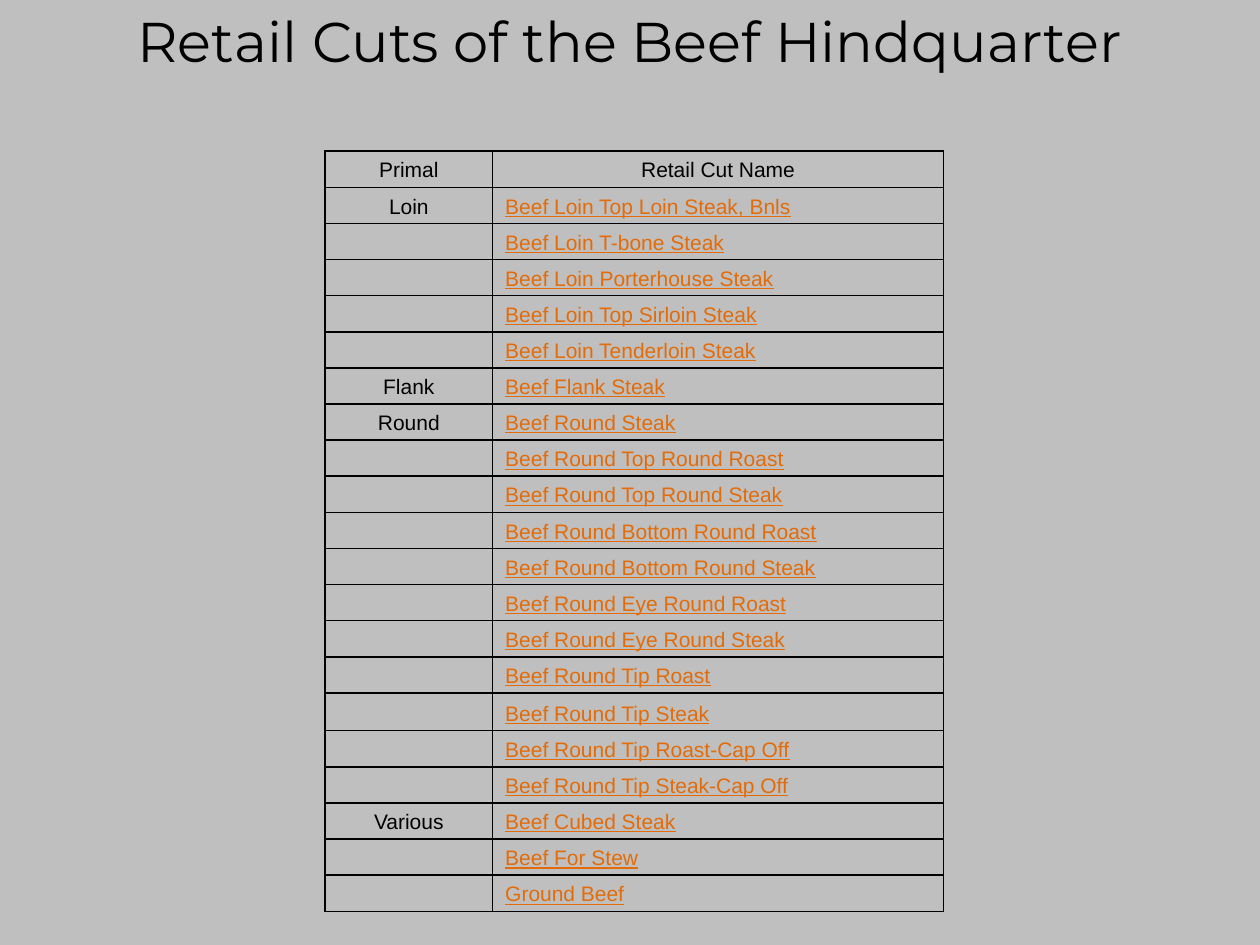
from lxml.etree import SubElement
from pptx import Presentation
from pptx.dml.color import RGBColor
from pptx.enum.text import MSO_ANCHOR, PP_ALIGN
from pptx.oxml.ns import qn
from pptx.util import Inches, Pt

BLACK = RGBColor(0x00, 0x00, 0x00)
ORANGE = RGBColor(0xE3, 0x6C, 0x09)
BACKGROUND = RGBColor(0xBF, 0xBF, 0xBF)
HEADER_FILL = RGBColor(0xC0, 0xC0, 0xC0)

CUTS = {
    "Loin": [
        "Beef Loin Top Loin Steak, Bnls", "Beef Loin T-bone Steak",
        "Beef Loin Porterhouse Steak", "Beef Loin Top Sirloin Steak",
        "Beef Loin Tenderloin Steak",
    ],
    "Flank": ["Beef Flank Steak"],
    "Round": [
        "Beef Round Steak", "Beef Round Top Round Roast",
        "Beef Round Top Round Steak", "Beef Round Bottom Round Roast",
        "Beef Round Bottom Round Steak", "Beef Round Eye Round Roast",
        "Beef Round Eye Round Steak", "Beef Round Tip Roast",
        "Beef Round Tip Steak", "Beef Round Tip Roast-Cap Off",
        "Beef Round Tip Steak-Cap Off",
    ],
    "Various": ["Beef Cubed Steak", "Beef For Stew", "Ground Beef"],
}
COLUMN_WIDTHS = (1.33, 3.58)
TABLE_HEIGHT = 6.04
TALL_ROW, TALL_HEIGHT = 15, 0.3


class SlideBuilder:
    """Draws styled elements on the current slide."""

    def __init__(self, slide):
        self.slide = slide
        self.title_font, self.title_size = "Montserrat", Pt(32)
        self.body_font, self.body_size = "Arial", Pt(12)
        slide.background.fill.solid()
        slide.background.fill.fore_color.rgb = BACKGROUND

    def style(self, paragraph, font_name, size, color, alignment, underline=False):
        paragraph.alignment = alignment
        for run in paragraph.runs:
            run.font.name = font_name
            run.font.size = size
            run.font.color.rgb = color
            run.font.underline = underline

    def title(self, text, left, top, width, height):
        shape = self.slide.shapes.add_textbox(
            Inches(left), Inches(top), Inches(width), Inches(height))
        shape.text_frame.word_wrap = True
        shape.text_frame.text = text
        self.style(shape.text_frame.paragraphs[0], self.title_font,
                   self.title_size, BLACK, PP_ALIGN.CENTER)

    def border(self, cell):
        properties = cell._tc.get_or_add_tcPr()
        for index, side in enumerate(("a:lnL", "a:lnR", "a:lnT", "a:lnB")):
            line = properties.makeelement(qn(side), {"w": str(Pt(1))})
            fill = SubElement(line, qn("a:solidFill"))
            SubElement(fill, qn("a:srgbClr"), val=str(BLACK))
            properties.insert(index, line)

    def cell(self, cell, text, fill, color, alignment, underline):
        if fill is None:
            cell.fill.background()
        else:
            cell.fill.solid()
            cell.fill.fore_color.rgb = fill
        cell.vertical_anchor = MSO_ANCHOR.BOTTOM
        cell.margin_top = cell.margin_bottom = Inches(0.04)
        cell.text_frame.text = text
        paragraph = cell.text_frame.paragraphs[0]
        self.style(paragraph, self.body_font, self.body_size, color,
                   alignment, underline)
        if not text:
            ending = paragraph._p.get_or_add_endParaRPr()
            ending.set("sz", str(int(self.body_size.pt * 100)))
        self.border(cell)

    def table(self, rows, left, top):
        table = self.slide.shapes.add_table(
            len(rows), len(COLUMN_WIDTHS), Inches(left), Inches(top),
            Inches(sum(COLUMN_WIDTHS)), Inches(TABLE_HEIGHT)).table
        table.first_row = table.horz_banding = False
        for column, width in zip(table.columns, COLUMN_WIDTHS):
            column.width = Inches(width)
        row_height = (TABLE_HEIGHT - TALL_HEIGHT) / (len(rows) - 1)
        for row_index, texts in enumerate(rows):
            table.rows[row_index].height = Inches(
                TALL_HEIGHT if row_index == TALL_ROW else row_height)
            for column_index, text in enumerate(texts):
                is_header = row_index == 0
                is_cut = column_index == 1 and not is_header
                self.cell(table.cell(row_index, column_index), text,
                          HEADER_FILL if is_header else None,
                          ORANGE if is_cut else BLACK,
                          PP_ALIGN.LEFT if is_cut else PP_ALIGN.CENTER, is_cut)


def main():
    presentation = Presentation()
    presentation.slide_width = Inches(10)
    presentation.slide_height = Inches(7.5)
    builder = SlideBuilder(
        presentation.slides.add_slide(presentation.slide_layouts[6]))
    rows = [("Primal", "Retail Cut Name")]
    for primal, names in CUTS.items():
        rows += [(primal if index == 0 else "", name)
                 for index, name in enumerate(names)]
    builder.table(rows, 2.58, 1.2)
    builder.title("Retail Cuts of the Beef Hindquarter", 0.75, 0, 8.5, 1.25)
    presentation.save("out.pptx")


if __name__ == "__main__":
    main()
